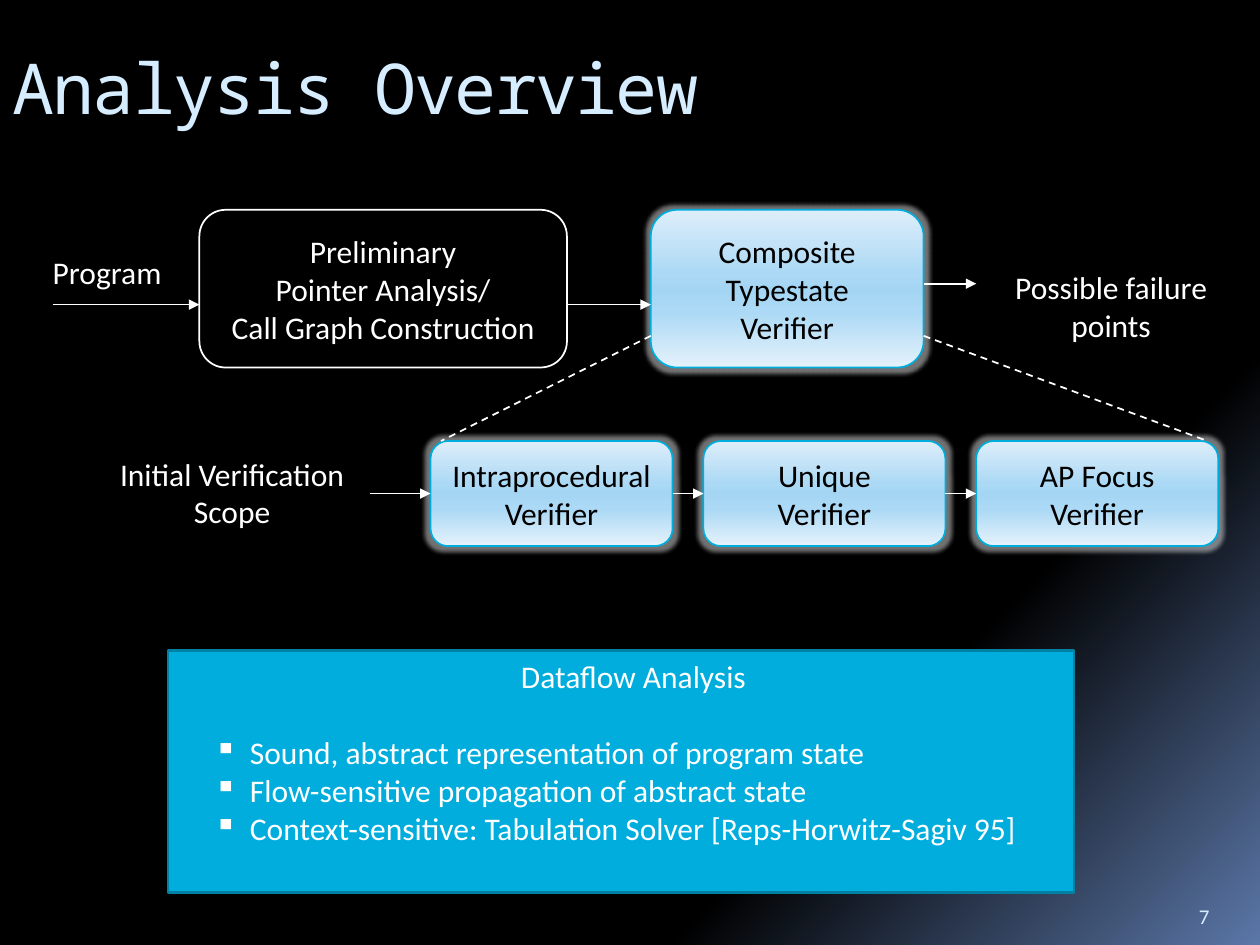
from dataclasses import dataclass
from typing import Optional

import pptx
import pptx.dml.color
import pptx.enum.dml
import pptx.enum.shapes
import pptx.enum.text
import pptx.oxml
import pptx.oxml.ns
import pptx.util
from pptx.util import Cm

ALIGN = pptx.enum.text.PP_ALIGN
ANCHOR = pptx.enum.text.MSO_ANCHOR
SHAPE = pptx.enum.shapes.MSO_SHAPE
NS = pptx.oxml.ns.nsdecls("a")
qn = pptx.oxml.ns.qn

WHITE, BLACK, PALE, CYAN = "FFFFFF", "000000", "D6ECFF", "00ADDC"
NIGHT = [(65, BLACK), (73, BLACK), (100, "5B77A8")]
GLASS = [(0, "DEEEFA"), (40, "ACD9F5"), (50, "A4D6F4"), (65, "ACD9F5"), (100, "E5F2FB")]
TOP, LEFT, BOTTOM, RIGHT = range(4)


@dataclass
class Stage:
    """A rounded box of the pipeline; all lengths in centimetres."""
    lines: list[str]
    x: float
    y: float
    width: float
    height: float
    glowing: bool = True


@dataclass
class Link:
    """A straight line, optionally joined to the side of a stage at either end."""
    start: tuple[float, float]
    end: tuple[float, float]
    dashed: bool = False
    source: Optional[object] = None
    target: Optional[object] = None


def rgb(value: str):
    return pptx.dml.color.RGBColor.from_string(value)


def paint_gradient(fill, owner, stops, angle: float) -> None:
    """Fill with (percent, colour) stops; the angle runs counter-clockwise."""
    fill.gradient()
    fill.gradient_angle = angle
    stop_list = next(owner.iter(qn("a:gsLst")))
    for old in list(stop_list):
        stop_list.remove(old)
    for percent, colour in stops:
        stop_list.append(pptx.oxml.parse_xml(
            f'<a:gs {NS} pos="{percent * 1000}"><a:srgbClr val="{colour}"/></a:gs>'))


def write(shape, lines, *, size=18, color=WHITE, font="Calibri", align=ALIGN.CENTER,
          anchor=ANCHOR.TOP, spacing=0):
    frame = shape.text_frame
    frame.word_wrap = True
    frame.vertical_anchor = anchor
    for index, line in enumerate(lines):
        paragraph = frame.paragraphs[0] if index == 0 else frame.add_paragraph()
        paragraph.alignment = align
        run = paragraph.add_run()
        run.text = line
        run.font.size = pptx.util.Pt(size)
        run.font.name = font
        run.font.color.rgb = rgb(color)
        if spacing:
            run.font._element.set("spc", str(spacing * 100))
    return frame


def add_label(slide, text: str, x: float, y: float, width: float, height: float, **style):
    box = slide.shapes.add_textbox(Cm(x), Cm(y), Cm(width), Cm(height))
    return write(box, [text], **style)


def add_panel(slide, kind, x: float, y: float, width: float, height: float,
              line: str, weight: float):
    panel = slide.shapes.add_shape(kind, Cm(x), Cm(y), Cm(width), Cm(height))
    panel.shadow.inherit = False
    panel.line.color.rgb = rgb(line)
    panel.line.width = pptx.util.Pt(weight)
    return panel


def add_stage(slide, stage: Stage):
    box = add_panel(slide, SHAPE.ROUNDED_RECTANGLE, stage.x, stage.y, stage.width,
                    stage.height, CYAN if stage.glowing else WHITE, 1)
    if stage.glowing:
        properties = box._element.spPr
        paint_gradient(box.fill, properties, GLASS, 270)
        properties.find(qn("a:effectLst")).append(pptx.oxml.parse_xml(
            f'<a:glow {NS} rad="63500"><a:srgbClr val="{WHITE}">'
            '<a:alpha val="45000"/></a:srgbClr></a:glow>'))
    else:
        box.fill.background()
    write(box, stage.lines, color=BLACK if stage.glowing else WHITE, anchor=ANCHOR.MIDDLE)
    return box


def add_link(slide, link: Link) -> None:
    connector = slide.shapes.add_connector(
        pptx.enum.shapes.MSO_CONNECTOR.STRAIGHT, *map(Cm, link.start + link.end))
    if link.source is not None:
        connector.begin_connect(link.source, RIGHT)
    if link.target is not None:
        connector.end_connect(link.target, LEFT)
    connector.line.color.rgb = rgb(WHITE)
    connector.line.width = pptx.util.Pt(1)
    if link.dashed:
        connector.line.dash_style = pptx.enum.dml.MSO_LINE.DASH
    else:
        connector.line._get_or_add_ln().append(
            pptx.oxml.parse_xml(f'<a:tailEnd {NS} type="triangle"/>'))
    connector._element.spPr.append(pptx.oxml.parse_xml(f"<a:effectLst {NS}/>"))


def add_dataflow_panel(slide) -> None:
    panel = add_panel(slide, SHAPE.RECTANGLE, 3.39, 13.12, 18.26, 4.87, "0080A3", 1.5)
    panel.fill.solid()
    panel.fill.fore_color.rgb = rgb(CYAN)
    frame = write(panel, [
        "Dataflow Analysis",
        "Sound, abstract representation of program state",
        "Flow-sensitive propagation of abstract state",
        "Context-sensitive: Tabulation Solver [Reps-Horwitz-Sagiv 95]",
    ])
    heading, *points = frame.paragraphs
    heading._p.get_or_add_pPr().set("marL", str(Cm(0.5)))
    points[0].space_before = pptx.util.Pt(22)
    for point in points:
        point.alignment = ALIGN.LEFT
        properties = point._p.get_or_add_pPr()
        properties.set("marL", str(Cm(1.4)))
        properties.set("indent", str(Cm(-0.72)))
        properties.append(pptx.oxml.parse_xml(f'<a:buChar {NS} char="▪"/>'))


def main() -> None:
    deck = pptx.Presentation()
    deck.slide_width, deck.slide_height = Cm(25.4), Cm(19.05)
    slide = deck.slides.add_slide(deck.slide_layouts[6])
    paint_gradient(slide.background.fill, slide._element, NIGHT, 315)

    title = add_label(slide, "Analysis Overview", 0, 0.84, 22.9, 1.4, size=40, color=PALE,
                      font="Noto Sans Mono", align=ALIGN.LEFT, spacing=-1)
    title.margin_top = Cm(0.05)

    preliminary = Stage(["Preliminary", "Pointer Analysis/", "Call Graph Construction"],
                        4.02, 4.23, 7.41, 3.18, glowing=False)
    composite = Stage(["Composite", "Typestate", "Verifier"], 13.12, 4.23, 5.5, 3.18)
    for stage in (preliminary, composite):
        add_stage(slide, stage)

    first_x, row_y, pitch, width, height = 8.68, 8.89, 5.5, 4.88, 2.12
    verifiers = [
        add_stage(slide, Stage([name, "Verifier"], first_x + i * pitch, row_y, width, height))
        for i, name in enumerate(["Intraprocedural", "Unique", "AP Focus"])
    ]

    row_middle = row_y + height / 2
    composite_right = composite.x + composite.width
    program_y, result_y, zoom_y = 6.14, 5.72, 6.77
    links = [
        Link((1.06, program_y), (preliminary.x, program_y)),
        Link((preliminary.x + preliminary.width, program_y), (composite.x, program_y)),
        Link((composite_right, result_y), (19.68, result_y)),
        Link((composite.x, zoom_y), (8.89, row_y), dashed=True),
        Link((composite_right, zoom_y), (24.34, row_y), dashed=True),
        Link((7.46, row_middle), (first_x, row_middle), target=verifiers[0]),
    ]
    links += [Link((0, 0), (0, 0), source=source, target=target)
              for source, target in zip(verifiers, verifiers[1:])]
    for link in links:
        add_link(slide, link)

    add_label(slide, "Program", 0.36, 4.98, 3.6, 1.02)
    add_label(slide, "Possible failure points", 19.4, 5.28, 6, 1.8)
    add_label(slide, "Initial Verification Scope", 1.9, 9.04, 5.56, 1.8)
    add_dataflow_panel(slide)
    add_label(slide, "7", 23.92, 17.83, 1.27, 1.02, size=12, color=PALE,
              align=ALIGN.LEFT, anchor=ANCHOR.BOTTOM)
    deck.save("out.pptx")


if __name__ == "__main__":
    main()
